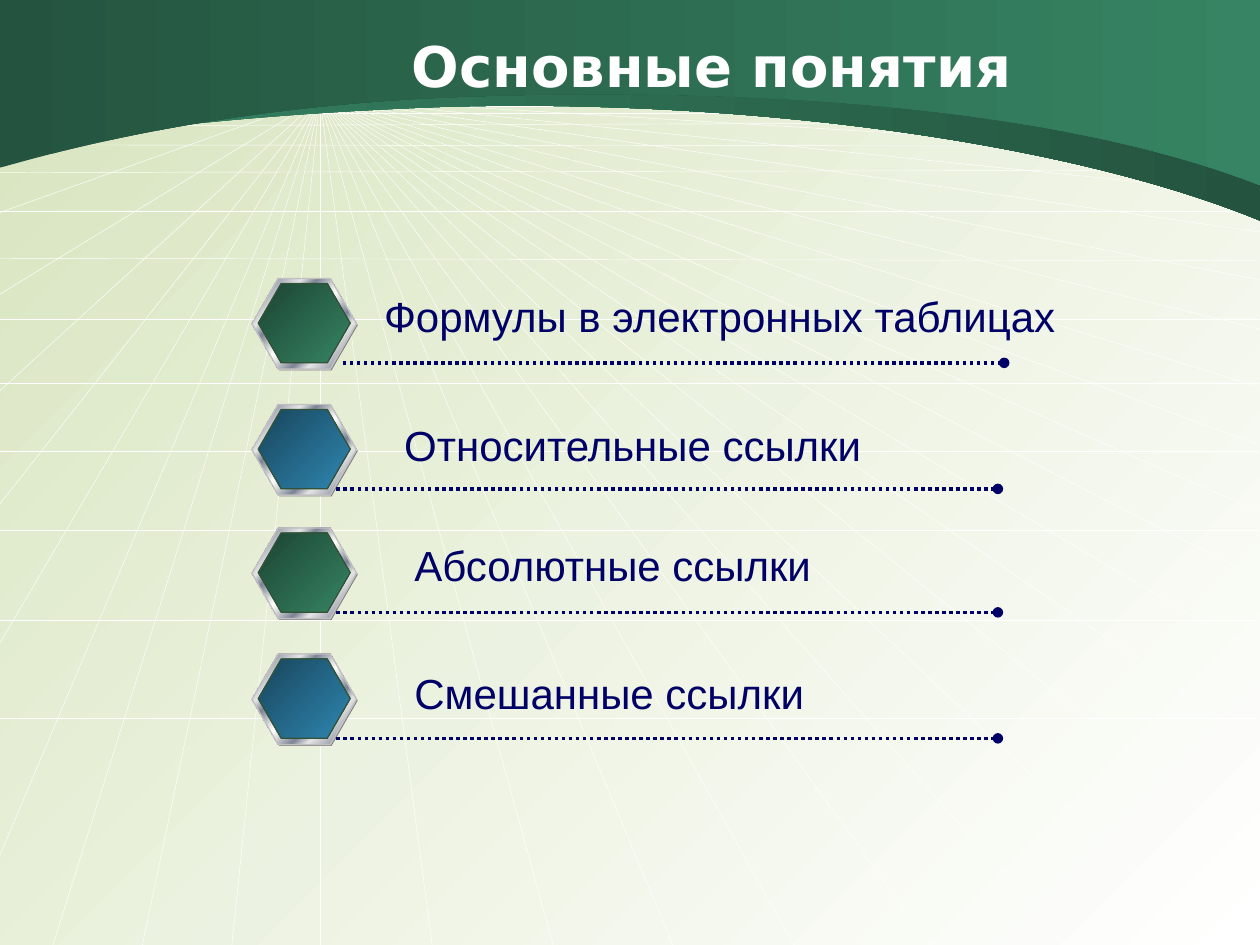
from copy import deepcopy

from lxml import etree
from pptx import Presentation
from pptx.dml.color import RGBColor
from pptx.enum.dml import MSO_LINE
from pptx.enum.shapes import MSO_CONNECTOR, MSO_SHAPE
from pptx.enum.text import MSO_ANCHOR, MSO_AUTO_SIZE, PP_ALIGN
from pptx.oxml.ns import qn
from pptx.util import Inches, Pt

STRAIGHT = MSO_CONNECTOR.STRAIGHT
HEXAGON = MSO_SHAPE.HEXAGON
DOTTED = MSO_LINE.ROUND_DOT
LEFT, CENTER = PP_ALIGN.LEFT, PP_ALIGN.CENTER
TOP, MIDDLE = MSO_ANCHOR.TOP, MSO_ANCHOR.MIDDLE

COLORS = {
    "white": "FFFFFF", "pale green": "D7E4BE", "navy": "000066",
    "green": "368463", "deep green": "24543F", "dark green": "1C4433",
    "blue": "2F86B1", "dark blue": "18455B", "rim": "335338",
    "silver": "E6E6E6", "steel": "7D8496", "edge": "C0C0C0", "gray": "808080",
}
RGB = {name: RGBColor.from_string(value) for name, value in COLORS.items()}

METAL = [(0, "silver"), (7, "steel"), (26, "silver"), (34, "steel"),
         (46, "silver"), (50, "white"), (54, "silver"), (66, "steel"),
         (74, "silver"), (93, "steel"), (100, "silver")]


def fill_gradient(fill, stops, angle):
    """Fill with (percent, colour) stops; the angle runs clockwise."""
    fill.gradient()
    fill.gradient_angle = (360 - angle) % 360
    first = fill.gradient_stops[0]._gs
    for _ in stops[2:]:
        first.addnext(deepcopy(first))
    for stop, (percent, color) in zip(fill.gradient_stops, stops):
        stop.position = percent / 100
        stop.color.rgb = RGB[color]


def add_text(text, left, top, width, height, *, font, size, color, bold=False,
             align=LEFT, anchor=TOP, wrap=False):
    box = slide.shapes.add_textbox(Inches(left), Inches(top),
                                   Inches(width), Inches(height))
    frame = box.text_frame
    frame.word_wrap = wrap
    frame.auto_size = MSO_AUTO_SIZE.NONE if wrap else MSO_AUTO_SIZE.SHAPE_TO_FIT_TEXT
    frame.vertical_anchor = anchor
    paragraph = frame.paragraphs[0]
    paragraph.alignment = align
    run = paragraph.add_run()
    run.text = text
    run.font.name, run.font.size, run.font.bold = font, Pt(size), bold
    run.font.color.rgb = RGB[color]


presentation = Presentation()
presentation.slide_width, presentation.slide_height = Inches(10), Inches(7.5)
slide = presentation.slides.add_slide(presentation.slide_layouts[6])
fill_gradient(slide.background.fill, [(0, "pale green"), (100, "white")], 45)

# Perspective mesh: rays from the vanishing point, then horizontal lines
vanish_x, vanish_y = 2.54, 0.78
mesh_left, mesh_right = -0.01, 9.99
right_ends = [1, 1.23, 1.54, 1.84, 2.22, 2.61, 3.07, 3.53, 4.06, 4.59, 5.2, 5.89, 6.8]
bottom_ends = [9.6, 8.46, 7.38, 6.3, 5.34, 4.39, 3.43, 2.54, 1.84, 1.13, 0.42]
left_ends = [6.81, 5.12, 4.01, 3.11, 2.34, 1.69, 1.16, 0.97, 0.78]
ray_ends = ([(mesh_right, y) for y in right_ends] + [(x, 7.5) for x in bottom_ends]
            + [(mesh_left, y) for y in left_ends])
levels = [(5.7, 5.7), (4.92, 4.92), (4.21, 4.21), (3.58, 3.58), (3.04, 3.04),
          (2.53, 2.53), (2.05, 2.07), (1.68, 1.68), (1.37, 1.35),
          (1.15, 1.16), (1, 0.97), (0.9, 0.9), (0.84, 0.84)]
mesh = [(vanish_x, vanish_y, x, y) for x, y in ray_ends]
mesh += [(mesh_left, start, mesh_right, end) for start, end in levels]
mesh_group = slide.shapes.add_group_shape()
for ends in mesh:
    line = mesh_group.shapes.add_connector(STRAIGHT, *map(Inches, ends))
    line.line.color.rgb = RGB["white"]
    line.line.width = Pt(0.25)

# Header waves: each lower edge is two cubic curves joined end to end
waves = [
    ([(0, 1.19), (0.11, 1.18), (1.33, 0.93), (3.47, 0.85),
      (5.61, 0.78), (8.31, 1.06), (10, 1.75)], ["green", "deep green"]),
    ([(0, 1.33), (0.11, 1.31), (1.51, 0.85), (3.64, 0.77),
      (5.77, 0.69), (8.31, 0.81), (10, 1.47)], ["deep green", "green"]),
]
for points, (start_color, end_color) in waves:
    builder = slide.shapes.build_freeform(0, 0)
    builder.add_line_segments([(Inches(x), Inches(y)) for x, y in points + [(10, 0)]],
                              close=True)
    wave = builder.convert_to_shape()
    # Turn the six inner segments into two curves of three points each
    segments = list(wave._element.iter(qn("a:lnTo")))
    for first in (1, 4):
        curve = etree.Element(qn("a:cubicBezTo"))
        segments[first].addprevious(curve)
        for segment in segments[first:first + 3]:
            curve.append(segment[0])
            segment.getparent().remove(segment)
    fill_gradient(wave.fill, [(0, start_color), (100, end_color)], 0)
    wave.line.fill.background()

# Terms: hexagon badge, dotted rule and label
terms = [  # label, badge top, rule left, text left, text top, text width, hue
    ("Формулы в электронных таблицах", 2.21, 2.72, 2.95, 2.26, 5.56, "green"),
    ("Относительные ссылки", 3.21, 2.67, 3.11, 3.28, 3.84, "blue"),
    ("Абсолютные ссылки", 4.19, 2.67, 3.19, 4.23, 3.36, "green"),
    ("Смешанные ссылки", 5.19, 2.67, 3.19, 5.25, 3.3, "blue"),
]
for label, top, rule_left, text_left, text_top, text_width, hue in terms:
    layers = [  # left, top, width, height, gradient, outline
        (2.01, top + 0.01, 0.83, 0.72, None, None),
        (2, top, 0.83, 0.72, METAL, "edge"),
        (2.05, top + 0.04, 0.73, 0.63, [(0, "dark " + hue), (100, hue)], "rim"),
    ]
    badge_group = slide.shapes.add_group_shape()
    for *box, stops, outline in layers:
        badge = badge_group.shapes.add_shape(HEXAGON, *map(Inches, box))
        badge.adjustments[0] = 0.289
        if stops:
            fill_gradient(badge.fill, stops, 45)
            badge.line.color.rgb = RGB[outline]
            badge.line.width = Pt(0.75)
        else:
            badge.fill.solid()
            badge.fill.fore_color.rgb = RGB["gray"]
            badge.line.fill.background()

    rule_y = Inches(top + 0.67)
    rule = slide.shapes.add_connector(STRAIGHT, Inches(rule_left), rule_y,
                                      Inches(rule_left + 5.25), rule_y)
    rule.line.color.rgb = RGB["navy"]
    rule.line.width = Pt(2)
    rule.line.dash_style = DOTTED
    etree.SubElement(rule.line._get_or_add_ln(), qn("a:tailEnd"), type="oval")
    add_text(label, text_left, text_top, text_width, 0.5,
             font="Arial", size=24, color="navy")

# Title
add_text("Основные понятия", 1.93, 0.21, 7.44, 0.62, font="DejaVu Sans", size=32,
         color="white", bold=True, align=CENTER, anchor=MIDDLE, wrap=True)

# No shadows on any line or shape, grouped or not
for item in slide.shapes:
    for shape in getattr(item, "shapes", [item]):
        if shape._element.tag == qn("p:cxnSp"):
            etree.SubElement(shape._element.spPr, qn("a:effectLst"))
        else:
            shape.shadow.inherit = False

presentation.save("out.pptx")
